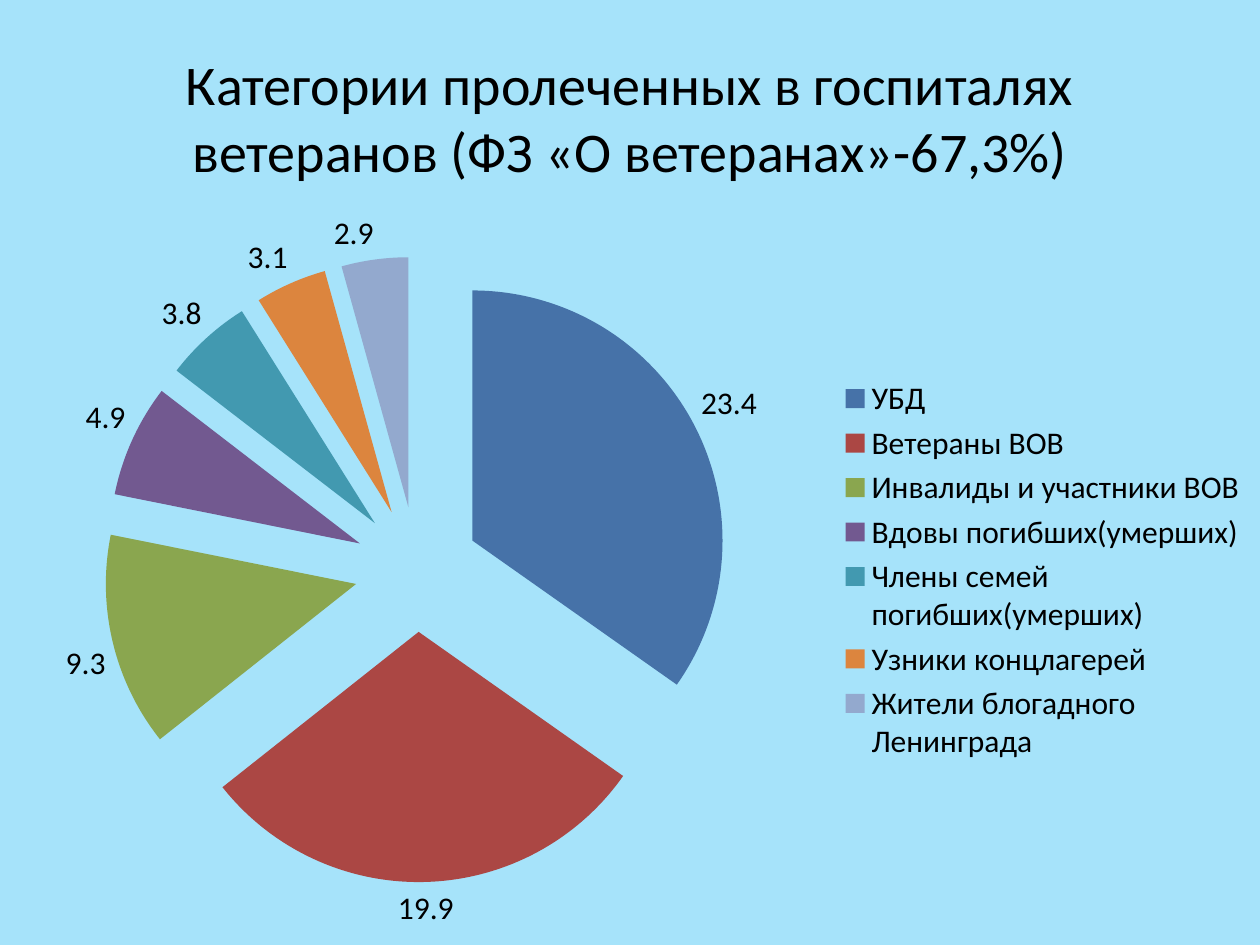
from lxml import etree
from pptx import Presentation
from pptx.chart.data import CategoryChartData
from pptx.dml.color import RGBColor
from pptx.enum.chart import XL_CHART_TYPE, XL_LABEL_POSITION, XL_LEGEND_POSITION
from pptx.enum.text import MSO_ANCHOR, PP_ALIGN
from pptx.oxml.ns import qn
from pptx.util import Inches, Pt

FONT = "Calibri"
BLACK = RGBColor(0x00, 0x00, 0x00)
SKY = RGBColor(0xA6, 0xE3, 0xFA)

# Category, share in percent, slice colour
GROUPS = [
    ("УБД", 23.4, RGBColor(0x46, 0x72, 0xA8)),
    ("Ветераны ВОВ", 19.9, RGBColor(0xAB, 0x47, 0x44)),
    ("Инвалиды и участники ВОВ", 9.3, RGBColor(0x8A, 0xA6, 0x4F)),
    ("Вдовы погибших(умерших)", 4.9, RGBColor(0x72, 0x59, 0x90)),
    ("Члены семей погибших(умерших)", 3.8, RGBColor(0x42, 0x99, 0xB0)),
    ("Узники концлагерей", 3.1, RGBColor(0xDC, 0x85, 0x3E)),
    ("Жители блогадного Ленинграда", 2.9, RGBColor(0x93, 0xA9, 0xCE)),
]


def style(font, size):
    font.name = FONT
    font.size = Pt(size)
    font.color.rgb = BLACK


def add_title(slide, left, top, width, height):
    frame = slide.shapes.add_textbox(left, top, width, height).text_frame
    frame.word_wrap = True
    frame.vertical_anchor = MSO_ANCHOR.MIDDLE
    para = frame.paragraphs[0]
    para.alignment = PP_ALIGN.CENTER
    run = para.add_run()
    run.text = "Категории пролеченных в госпиталях ветеранов (ФЗ «О ветеранах»-67,3%)"
    style(run.font, 32)


def explode(series, amount):
    """Pull every slice out; the element comes before the points."""
    node = etree.Element(qn("c:explosion"), val=str(amount))
    series._element.find(qn("c:dPt")).addprevious(node)


def add_pie(slide, left, top, width, height):
    data = CategoryChartData()
    data.categories = [name for name, _, _ in GROUPS]
    data.add_series("Series 1", [share for _, share, _ in GROUPS])
    chart = slide.shapes.add_chart(
        XL_CHART_TYPE.PIE, left, top, width, height, data).chart
    chart.has_title = False
    style(chart.font, 18)

    # Legend
    chart.has_legend = True
    chart.legend.position = XL_LEGEND_POSITION.RIGHT
    chart.legend.include_in_layout = False

    # Slices
    plot = chart.plots[0]
    plot.vary_by_categories = True
    series = plot.series[0]
    for i, (_, _, color) in enumerate(GROUPS):
        fill = series.points[i].format.fill
        fill.solid()
        fill.fore_color.rgb = color
    explode(series, 25)

    # Value labels
    plot.has_data_labels = True
    labels = plot.data_labels
    labels.show_value = True
    labels.show_percentage = False
    labels.position = XL_LABEL_POSITION.OUTSIDE_END
    style(labels.font, 18)


def main():
    deck = Presentation()
    deck.slide_width, deck.slide_height = Inches(10), Inches(7.5)
    slide = deck.slides.add_slide(deck.slide_layouts[6])
    back = slide.background.fill
    back.solid()
    back.fore_color.rgb = SKY
    add_title(slide, Inches(0.5), Inches(0.3), Inches(9), Inches(1.25))
    add_pie(slide, Inches(0), Inches(1.55), Inches(10), Inches(5.95))
    deck.save("out.pptx")


if __name__ == "__main__":
    main()
